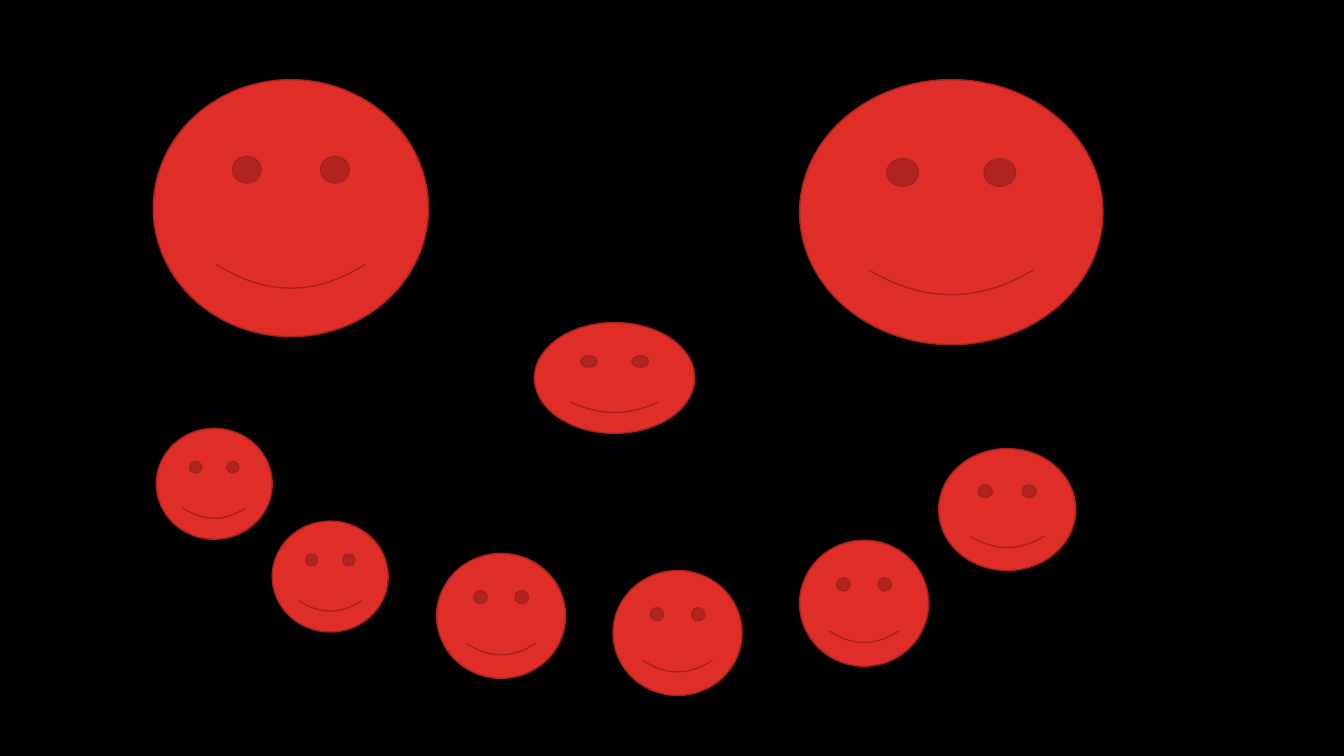
from pptx import Presentation
from pptx.dml.color import RGBColor
from pptx.enum.shapes import MSO_SHAPE
from pptx.util import Inches, Pt

BLACK = RGBColor(0x00, 0x00, 0x00)
RED = RGBColor(0xDF, 0x2E, 0x28)
DARK_RED = RGBColor(0xA5, 0x22, 0x1E)

EYES = [(1.52, 0.79, 2.73, 2.55), (7.93, 0.79, 3.01, 2.63)]
NOSE = (5.3, 3.2, 1.59, 1.1)
MOUTH = [
    (1.55, 4.25, 1.15, 1.1),
    (2.7, 5.17, 1.15, 1.1),
    (4.33, 5.49, 1.28, 1.24),
    (6.08, 5.66, 1.28, 1.24),
    (7.93, 5.36, 1.28, 1.25),
    (9.31, 4.45, 1.36, 1.21),
]


def add_smiley(slide, box):
    sp = slide.shapes.add_shape(MSO_SHAPE.SMILEY_FACE, *map(Inches, box))
    sp.shadow.inherit = False
    sp.fill.solid()
    sp.fill.fore_color.rgb = RED
    sp.line.color.rgb = DARK_RED
    sp.line.width = Pt(1)


def add_face_slide(prs):
    slide = prs.slides.add_slide(prs.slide_layouts[6])
    fill = slide.background.fill
    fill.solid()
    fill.fore_color.rgb = BLACK
    for box in [*EYES, NOSE, *MOUTH]:
        add_smiley(slide, box)


def main():
    prs = Presentation()
    prs.slide_width = Inches(13.33)
    prs.slide_height = Inches(7.5)
    add_face_slide(prs)
    prs.save("out.pptx")


if __name__ == "__main__":
    main()
